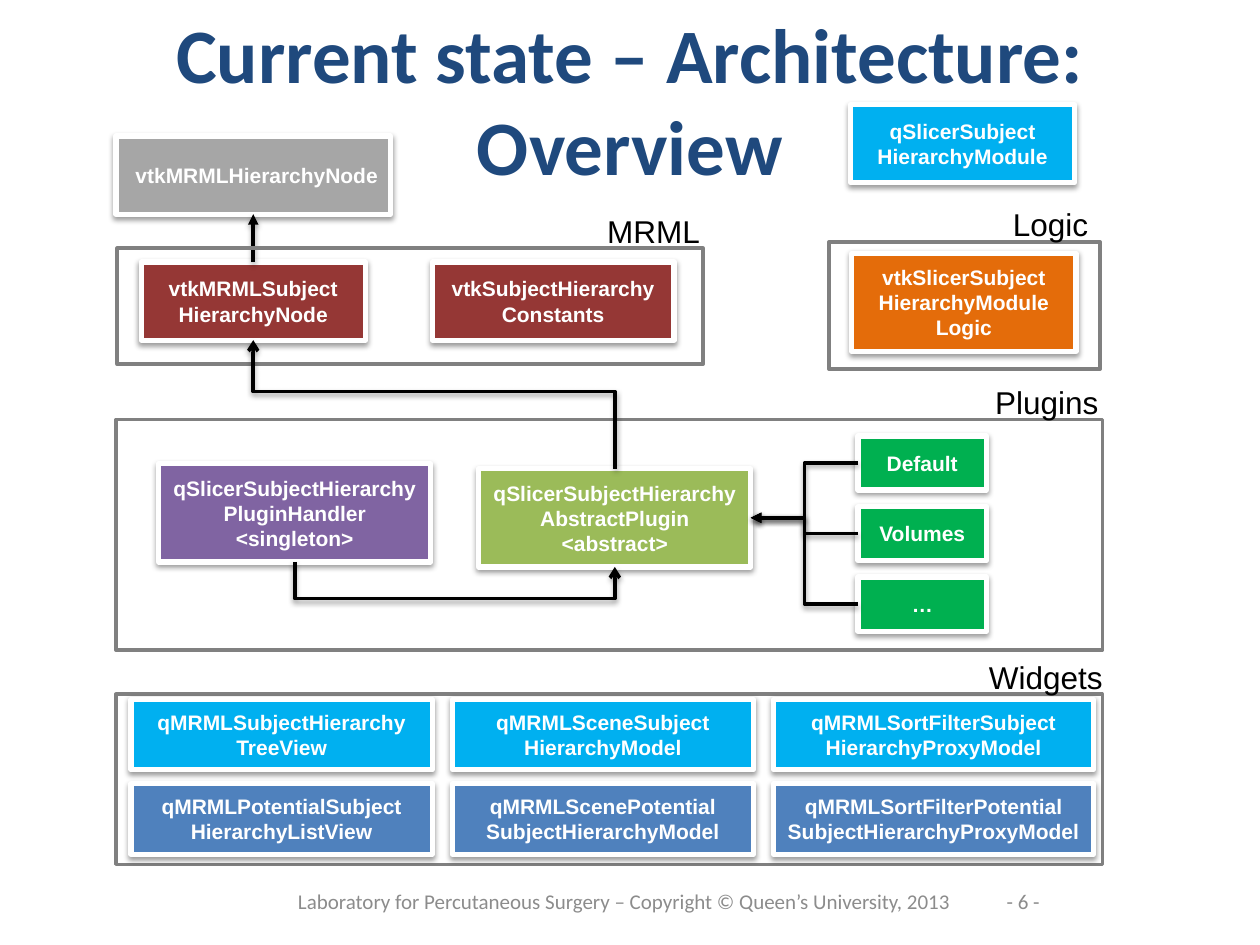
from dataclasses import dataclass

from lxml import etree
from pptx import Presentation
from pptx import util as u
from pptx.dml.color import RGBColor
from pptx.enum import shapes, text
from pptx.oxml.ns import qn

COLS, ROWS = 100, 75
BOTTOM, TOP, LEFT, RIGHT = 2, 0, 1, 3


@dataclass(frozen=True)
class Theme:
    """Colours, fonts and sizes of the slide."""
    title: str = "1F497D"
    footer: str = "8C8C8C"
    white: str = "FFFFFF"
    black: str = "000000"
    frame: str = "808080"
    base: str = "A6A6A6"
    node: str = "953735"
    logic: str = "E46C0A"
    handler: str = "8064A2"
    abstract: str = "9BBB59"
    plugin: str = "00B050"
    widget: str = "00B0F0"
    potential: str = "4F81BD"
    heading_font: str = "Calibri"
    body_font: str = "Arial"
    title_size: int = 44
    label_size: int = 18
    body_size: int = 12
    border: int = 3
    stroke: int = 2


T = Theme()


@dataclass(frozen=True)
class Box:
    """A rectangle in grid columns and rows."""
    x: float
    y: float
    w: float
    h: float

    def sub(self, x, y, w, h):
        """Return a box offset from this box's corner."""
        return Box(self.x + x, self.y + y, w, h)

    def emu(self):
        """Return the left, top, width and height."""
        return [grid(v) for v in (self.x, self.y, self.w, self.h)]


def grid(n):
    """Turn grid units into a length."""
    return u.Inches(n / 10)


def rgb(colour):
    """Return a colour object."""
    return RGBColor.from_string(colour)


def write(sp, words, size, colour, font=T.body_font, bold=False, align=text.PP_ALIGN.CENTER):
    """Write one paragraph into a shape."""
    p = sp.text_frame.paragraphs[0]
    p.text = words
    p.alignment = align
    p.font.size, p.font.name, p.font.bold = u.Pt(size), font, bold
    p.font.color.rgb = rgb(colour)


def textbox(slide, box, words, size, colour, anchor=text.MSO_ANCHOR.TOP, wrap=True, **style):
    """Add a text box."""
    sp = slide.shapes.add_textbox(*box.emu())
    sp.text_frame.word_wrap = wrap
    sp.text_frame.vertical_anchor = anchor
    write(sp, words, size, colour, **style)


def drop_shadow(effects):
    """Put a soft shadow into an effect list."""
    shadow = etree.SubElement(effects, qn("a:outerShdw"), blurRad="40000", dist="20000",
                              dir="5400000", rotWithShape="0")
    colour = etree.SubElement(shadow, qn("a:srgbClr"), val=T.black)
    etree.SubElement(colour, qn("a:alpha"), val="38000")


def rectangle(slide, box, colour, width):
    """Add an unfilled rectangle without a shadow."""
    sp = slide.shapes.add_shape(shapes.MSO_SHAPE.RECTANGLE, *box.emu())
    sp.shadow.inherit = False
    sp.fill.background()
    sp.line.color.rgb = rgb(colour)
    sp.line.width = u.Pt(width)
    return sp


def class_box(slide, box, words, fill, inset=1, align=text.PP_ALIGN.CENTER):
    """Add a filled box that names a class."""
    sp = rectangle(slide, box, T.white, T.border)
    sp.fill.solid()
    sp.fill.fore_color.rgb = rgb(fill)
    drop_shadow(sp._element.spPr.find(qn("a:effectLst")))
    tf = sp.text_frame
    tf.word_wrap = True
    tf.vertical_anchor = text.MSO_ANCHOR.MIDDLE
    tf.margin_left = tf.margin_right = grid(inset)
    write(sp, words, T.body_size, T.white, bold=True, align=align)
    return sp


def frame(slide, box, label, width, overhang):
    """Outline a region and label its upper right corner."""
    rectangle(slide, box, T.frame, T.stroke)
    textbox(slide, box.sub(box.w + overhang - width, -3.4, width, 4), label, T.label_size,
            T.black, wrap=False, align=text.PP_ALIGN.LEFT)


def arrow(slide, kind, head):
    """Add a black arrow, to be placed afterwards."""
    cx = slide.shapes.add_connector(kind, 0, 0, 0, 0)
    cx.line.color.rgb = rgb(T.black)
    cx.line.width = u.Pt(T.stroke)
    sp_pr = cx._element.spPr
    etree.SubElement(sp_pr.find(qn("a:ln")), qn("a:tailEnd"), type=head)
    drop_shadow(etree.SubElement(sp_pr, qn("a:effectLst")))
    return cx


def join(slide, kind, start, start_side, end, end_side):
    """Join two boxes with an inheritance arrow."""
    cx = arrow(slide, kind, "triangle")
    cx.begin_connect(start, start_side)
    cx.end_connect(end, end_side)


def vertical_elbow(slide, start, end, bend):
    """Draw an arrow that leaves vertically and turns at the given share of its rise."""
    (x1, y1), (x2, y2) = start, end
    w, h = abs(y2 - y1), abs(x2 - x1)
    cx = arrow(slide, shapes.MSO_CONNECTOR.ELBOW, "arrow")
    cx.left, cx.top, cx.width, cx.height = Box((x1 + x2 - w) / 2, (y1 + y2 - h) / 2, w, h).emu()
    sp_pr = cx._element.spPr
    xfrm = sp_pr.find(qn("a:xfrm"))
    xfrm.set("rot", "16200000")
    xfrm.set("flipH", str(int(y2 > y1)))
    xfrm.set("flipV", str(int(x2 < x1)))
    guides = sp_pr.find(qn("a:prstGeom")).get_or_add_avLst()
    etree.SubElement(guides, qn("a:gd"), name="adj1", fmla=f"val {round(bend * 100000)}")


def side(box, share):
    """Return the middle of a box's top (0) or bottom (1)."""
    return box.x + box.w / 2, box.y + box.h * share


def page(slide, box):
    """Place the title and footer."""
    textbox(slide, box.sub(5, 0, 90, 10.1), "Current state – Architecture: Overview",
            T.title_size, T.title, font=T.heading_font, bold=True)
    footers = [(20.8, 57.5, "Laboratory for Percutaneous Surgery – Copyright © Queen’s University, 2013"),
               (78.3, 5.8, "- 6 -")]
    for x, w, words in footers:
        textbox(slide, box.sub(x, 69.5, w, 4), words, T.body_size, T.footer,
                anchor=text.MSO_ANCHOR.MIDDLE, font=T.heading_font)


def mrml(slide, box):
    """Place the data nodes and return the subject node's box."""
    subject = box.sub(1.9, 1.1, 17.8, 6.2)
    base = class_box(slide, box.sub(-0.1, -8.9, 21.8, 6.2), "vtkMRMLHierarchyNode", T.base,
                     align=text.PP_ALIGN.RIGHT)
    node = class_box(slide, subject, "vtkMRMLSubjectHierarchyNode", T.node, 1.85)
    join(slide, shapes.MSO_CONNECTOR.STRAIGHT, node, TOP, base, BOTTOM)
    class_box(slide, box.sub(25, 1.1, 19.2, 6.2), "vtkSubjectHierarchyConstants", T.node, 1.45)
    frame(slide, box, "MRML", 9.5, 0.9)
    return subject


def logic(slide, box):
    """Place the module and its logic."""
    class_box(slide, box.sub(1.7, -10.9, 17.8, 6.2), "qSlicerSubject\nHierarchyModule", T.widget)
    class_box(slide, box.sub(1.8, 0.9, 17.8, 7.8), "vtkSlicerSubjectHierarchyModuleLogic",
              T.logic, 1.85)
    frame(slide, box, "Logic", 8.1, 0.2)


def plugins(slide, box, subject):
    """Place the plugin classes and link them to the subject node."""
    handler, abstract = box.sub(3.4, 3.5, 21.6, 7.8), box.sub(28.8, 3.9, 21.6, 7.8)
    class_box(slide, handler, "qSlicerSubjectHierarchyPluginHandler\n<singleton>", T.handler)
    parent = class_box(slide, abstract, "qSlicerSubjectHierarchyAbstractPlugin\n<abstract>", T.abstract)
    frame(slide, box, "Plugins", 10.3, 0.8)
    vertical_elbow(slide, side(handler, 1), side(abstract, 1), 7.25)
    vertical_elbow(slide, side(abstract, 0), side(subject, 1), 0.6)
    for i, name in enumerate(["Default", "Volumes", "…"]):
        child = class_box(slide, box.sub(58.9, 1.3 + 5.6 * i, 10.2, 4.3), name, T.plugin)
        join(slide, shapes.MSO_CONNECTOR.ELBOW, child, LEFT, parent, RIGHT)


def widgets(slide, box):
    """Place the widgets in two rows of three."""
    frame(slide, box, "Widgets", 11.1, 1.1)
    rows = [(T.widget, ["qMRMLSubjectHierarchyTreeView", "qMRMLSceneSubject\nHierarchyModel",
                        "qMRMLSortFilterSubject\nHierarchyProxyModel"]),
            (T.potential, ["qMRMLPotentialSubjectHierarchyListView",
                           "qMRMLScenePotential\nSubjectHierarchyModel",
                           "qMRMLSortFilterPotential\nSubjectHierarchyProxyModel"])]
    columns = [(23.9, 2.05), (23.9, 2.05), (25.4, 1)]
    for r, (fill, names) in enumerate(rows):
        for c, (name, (width, inset)) in enumerate(zip(names, columns)):
            class_box(slide, box.sub(1.2 + 25.5 * c, 0.4 + 6.7 * r, width, 5.6), name, fill, inset)


def main():
    """Build and save the slide."""
    prs = Presentation()
    prs.slide_width, prs.slide_height = grid(COLS), grid(ROWS)
    slide = prs.slides.add_slide(prs.slide_layouts[6])
    page(slide, Box(0, 0, COLS, ROWS))
    subject = mrml(slide, Box(9.3, 19.7, 46.5, 9.2))
    logic(slide, Box(65.8, 19.2, 21.5, 10.1))
    plugins(slide, Box(9.2, 33.3, 78.3, 18.3), subject)
    widgets(slide, Box(9.2, 55.1, 78.3, 13.5))
    prs.save("out.pptx")


if __name__ == "__main__":
    main()
